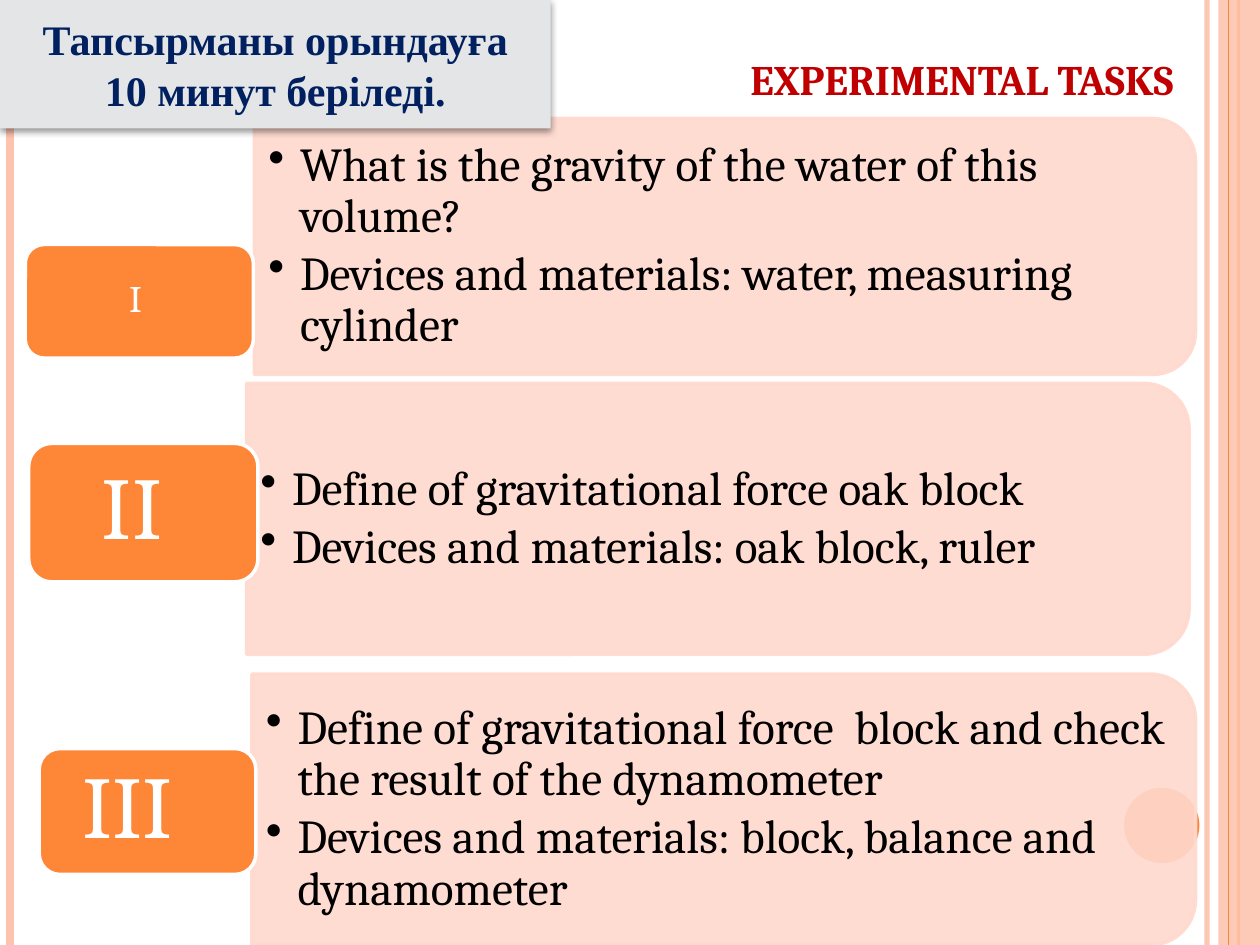
from lxml import etree
from pptx import Presentation
from pptx import util as u
from pptx.dml.color import RGBColor
from pptx.enum import shapes, text
from pptx.oxml.ns import qn

COLORS = {
    "accent": "FE8637", "band": "FEC3AE", "panel": "FFD9CE", "title": "C00000",
    "banner": "E4E5E6", "navy": "002060", "black": "000000", "white": "FFFFFF",
}
SLIDE_W, SLIDE_H = 25.4, 19.05
TITLE = "experimental tasks"
BANNER = ["Тапсырманы орындауға", "10 минут беріледі."]

# Boxes are (left, top, width, height) in cm
TASKS = [
    {"panel": (5.13, 2.39, 18.97, 5.16), "label": (0.51, 4.93, 4.6, 2.29),
     "number": "І", "size": 20, "margins": (0.2, 0.1, 0.35, 0.1),
     "lines": ["What is the gravity of the water of this volume?",
               "Devices and materials: water, measuring cylinder"]},
    {"panel": (4.97, 7.73, 19, 5.46), "label": (0.58, 8.94, 4.62, 2.79),
     "number": "ІІ", "size": 47, "margins": (0.5, 0.25, 0.95, 0.25),
     "lines": ["Define of gravitational force oak block",
               "Devices and materials: oak block, ruler"]},
    {"panel": (5.08, 13.59, 19.02, 5.46), "label": (0.79, 15.09, 4.37, 2.54),
     "number": "ІІІ", "size": 47, "margins": (0.5, 0.25, 1.3, 0.25),
     "lines": ["Define of gravitational force  block and check the result of the dynamometer",
               "Devices and materials: block, balance and dynamometer"]},
]
# Vertical lines: x in cm, colour, width in points, opacity in percent
LINES_BELOW = [(24.33, "band", 3, 93), (0.2, "band", 4.5, 100), (24.97, "accent", 1.5, 100)]
LINES_ABOVE = [(24.77, "accent", 0.75, 100)]

NUMBER_FONT = {"name": "Cambria"}
TASK_FONT = {"name": "Cambria", "size": u.Pt(27)}
TITLE_FONT = {"name": "Cambria", "size": u.Pt(30), "bold": True}
BANNER_FONT = {"name": "Times New Roman", "size": u.Pt(24), "bold": True}
CENTERED = {"alignment": text.PP_ALIGN.CENTER}
BULLETED = {"level": 1, "line_spacing": 0.9, "space_after": u.Pt(4)}
MIDDLE = text.MSO_ANCHOR.MIDDLE


def set_all(target, values):
    for name, value in values.items():
        setattr(target, name, value)


def cm_box(box):
    return [u.Cm(value) for value in box]


def paint(color_format, color, opacity=100):
    """Colour a solid fill, with transparency when asked for."""
    color_format.solid()
    color_format.fore_color.rgb = RGBColor.from_string(COLORS[color])
    if opacity < 100:
        element = color_format._xPr.find(qn("a:solidFill"))[0]
        etree.SubElement(element, qn("a:alpha")).set("val", str(opacity * 1000))


def add_shape(slide, kind, box, fill, opacity=100, line=None):
    shape = slide.shapes.add_shape(kind, *cm_box(box))
    shape.shadow.inherit = False
    paint(shape.fill, fill, opacity)
    if line:
        paint(shape.line.fill, line, opacity)
        shape.line.width = u.Pt(2)
    else:
        shape.line.fill.background()
    return shape


def add_vertical_lines(slide, lines):
    for x, color, width, opacity in lines:
        line = slide.shapes.add_connector(
            shapes.MSO_CONNECTOR.STRAIGHT, u.Cm(x), 0, u.Cm(x), u.Cm(SLIDE_H))
        line.line.width = u.Pt(width)
        paint(line.line.fill, color, opacity)
        etree.SubElement(line._element.spPr, qn("a:effectLst"))


def write(shape, lines, font, color, layout, margins=None, anchor=MIDDLE, wrap=True):
    frame = shape.text_frame
    set_all(frame, {"word_wrap": wrap, "vertical_anchor": anchor})
    if margins:
        sides = ("margin_left", "margin_top", "margin_right", "margin_bottom")
        set_all(frame, dict(zip(sides, cm_box(margins))))
    for index, line in enumerate(lines):
        paragraph = frame.paragraphs[0] if index == 0 else frame.add_paragraph()
        set_all(paragraph, layout)
        run = paragraph.add_run()
        run.text = line
        set_all(run.font, font)
        run.font.color.rgb = RGBColor.from_string(COLORS[color])
    return frame


def add_bullets(frame):
    indent = u.Cm(0.64)
    for paragraph in frame.paragraphs:
        properties = paragraph._p.get_or_add_pPr()
        properties.set("marL", str(indent))
        properties.set("indent", str(-indent))
        etree.SubElement(properties, qn("a:buChar")).set("char", "•")


def add_panel(slide, task):
    left, top, width, height = task["panel"]
    # The shape is turned a quarter, so its box swaps sides around the same centre
    turned = (left + (width - height) / 2, top + (height - width) / 2, height, width)
    panel = add_shape(slide, shapes.MSO_SHAPE.ROUND_2_SAME_RECTANGLE, turned, "panel", 90, "panel")
    panel.rotation = 90
    inset = 0.25
    textbox = slide.shapes.add_textbox(
        *cm_box((left, top + inset, width - inset, height - 2 * inset)))
    add_bullets(write(textbox, task["lines"], TASK_FONT, "black", BULLETED,
                      (0.28, 0.15, 0.28, 0.15)))


def add_label(slide, task):
    label = add_shape(slide, shapes.MSO_SHAPE.ROUNDED_RECTANGLE, task["label"],
                      "accent", line="white")
    write(label, [task["number"]], {**NUMBER_FONT, "size": u.Pt(task["size"])}, "white",
          {**CENTERED, "line_spacing": 0.9}, task["margins"])


def add_banner(slide):
    banner = add_shape(slide, shapes.MSO_SHAPE.RECTANGLE, (0, 0, 11.1, 2.59), "banner")
    write(banner, BANNER, BANNER_FONT, "navy", CENTERED, wrap=False)
    effects = banner._element.spPr.find(qn("a:effectLst"))
    shadow = etree.SubElement(effects, qn("a:outerShdw"), blurRad=str(u.Pt(4)),
                              dist=str(u.Pt(1.6)), dir="5400000", rotWithShape="0")
    color = etree.SubElement(shadow, qn("a:srgbClr"), val=COLORS["black"])
    etree.SubElement(color, qn("a:alpha"), val="42000")


def main():
    presentation = Presentation()
    set_all(presentation, {"slide_width": u.Cm(SLIDE_W), "slide_height": u.Cm(SLIDE_H)})
    slide = presentation.slides.add_slide(presentation.slide_layouts[5])

    # Edge decoration
    add_vertical_lines(slide, LINES_BELOW)
    add_shape(slide, shapes.MSO_SHAPE.RECTANGLE, (24.56, 0, 0.84, SLIDE_H), "band", 87)
    add_vertical_lines(slide, LINES_ABOVE)
    add_shape(slide, shapes.MSO_SHAPE.OVAL, (22.66, 15.88, 1.52, 1.52), "accent")

    # Title in small capitals
    title = slide.shapes.title
    set_all(title, dict(zip(("left", "top", "width", "height"),
                            cm_box((11.51, 0.3, 12.4, 1.96)))))
    frame = write(title, [TITLE], TITLE_FONT, "title",
                  {"alignment": text.PP_ALIGN.RIGHT}, anchor=text.MSO_ANCHOR.BOTTOM)
    frame.paragraphs[0].runs[0].font._element.set("cap", "small")

    # Tasks with their numbers
    for task in TASKS:
        add_panel(slide, task)
        add_label(slide, task)

    # Time limit
    add_banner(slide)
    presentation.save("out.pptx")


if __name__ == "__main__":
    main()
